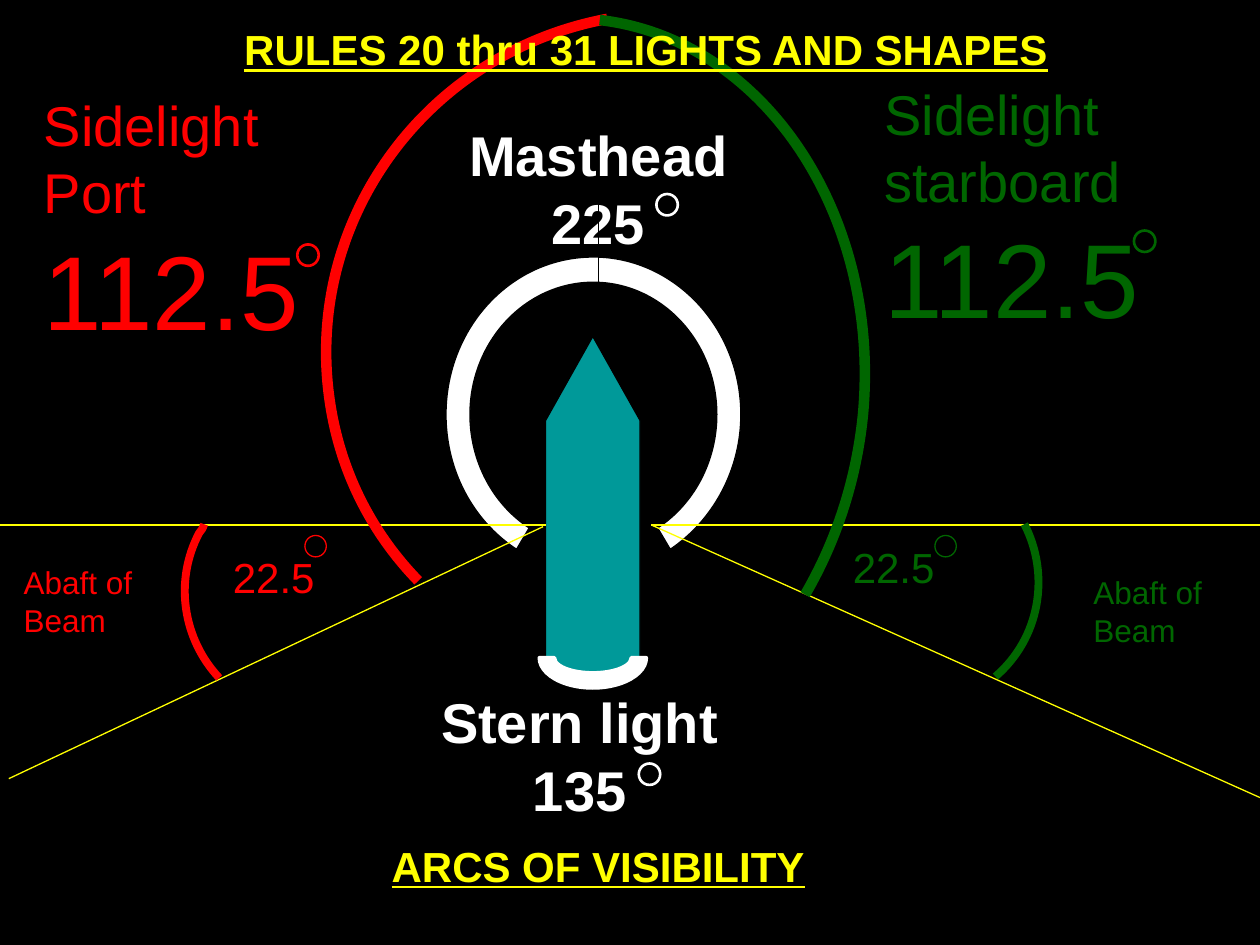
"""Build a slide showing the arcs of visibility of a vessel's lights."""
import math
from dataclasses import dataclass

import pptx
import pptx.dml.color
import pptx.enum.shapes
import pptx.enum.text
import pptx.oxml
import pptx.oxml.ns
import pptx.util
from pptx.util import Inches

RED, GREEN, WHITE, YELLOW, BLACK, TEAL = (
    "FF0000", "006600", "FFFFFF", "FFFF00", "000000", "009999")
SHAPES = pptx.enum.shapes.MSO_SHAPE
CENTER = pptx.enum.text.PP_ALIGN.CENTER
DRAWING = 'xmlns:a="http://schemas.openxmlformats.org/drawingml/2006/main"'
BEAM = 25 / 6
Point = tuple[float, float]
Box = tuple[float, float, float, float]


@dataclass
class Label:
    box: Box
    lines: list[tuple[str, int]]
    color: str
    bold: bool = False
    underline: bool = False
    centered: bool = False
    wrap: bool = False


@dataclass
class Degree:
    left: float
    top: float
    color: str
    width: float = 1.5


@dataclass
class Ray:
    start: Point
    end: Point
    color: str = YELLOW


@dataclass
class Arc:
    box: Box
    rotation: float
    curves: list[list[Point]]
    line: str
    width: float
    fill: str | None = None


def rgb(color: str) -> pptx.dml.color.RGBColor:
    return pptx.dml.color.RGBColor.from_string(color)


def style(shape, fill: str | None, line: str, width: float) -> None:
    shape.shadow.inherit = False
    if fill:
        shape.fill.solid()
        shape.fill.fore_color.rgb = rgb(fill)
    else:
        shape.fill.background()
    shape.line.color.rgb = rgb(line)
    shape.line.width = pptx.util.Pt(width)


def add_preset(slide, preset, box: Box, fill: str | None, line: str, width: float):
    shape = slide.shapes.add_shape(preset, *map(Inches, box))
    style(shape, fill, line, width)
    return shape


def add_degree(slide, degree: Degree) -> None:
    box = (degree.left, degree.top, 0.17, 0.17)
    add_preset(slide, SHAPES.OVAL, box, None, degree.color, degree.width)


def add_label(slide, label: Label) -> None:
    frame = slide.shapes.add_textbox(*map(Inches, label.box)).text_frame
    frame.word_wrap = label.wrap
    frame.auto_size = pptx.enum.text.MSO_AUTO_SIZE.SHAPE_TO_FIT_TEXT
    for index, (text, size) in enumerate(label.lines):
        paragraph = frame.add_paragraph() if index else frame.paragraphs[0]
        if label.centered:
            paragraph.alignment = CENTER
        run = paragraph.add_run()
        run.text = text
        run.font.name = "Arial"
        run.font.size = pptx.util.Pt(size)
        run.font.bold = label.bold
        run.font.underline = label.underline
        run.font.color.rgb = rgb(label.color)


def add_ray(slide, ray: Ray) -> None:
    connector = slide.shapes.add_connector(
        pptx.enum.shapes.MSO_CONNECTOR.STRAIGHT, *map(Inches, ray.start + ray.end))
    connector.line.color.rgb = rgb(ray.color)
    connector.line.width = pptx.util.Pt(0.75)
    connector._element.spPr.append(pptx.oxml.parse_xml(f"<a:effectLst {DRAWING}/>"))
    connector._element.remove(connector._element.find(pptx.oxml.ns.qn("p:style")))


def add_arc(slide, arc: Arc) -> None:
    left, top, width, height = arc.box
    angle = math.radians(arc.rotation)

    def point_xml(point: Point) -> str:
        x, y = point[0] - left - width / 2, point[1] - top - height / 2
        across = x * math.cos(angle) + y * math.sin(angle) + width / 2
        down = y * math.cos(angle) - x * math.sin(angle) + height / 2
        return f'<a:pt x="{Inches(across)}" y="{Inches(down)}"/>'

    commands = ""
    for index, curve in enumerate(arc.curves):
        tag = "lnTo" if index else "moveTo"
        commands += f"<a:{tag}>{point_xml(curve[0])}</a:{tag}>"
        for first in range(1, len(curve), 3):
            points = "".join(map(point_xml, curve[first:first + 3]))
            commands += f"<a:cubicBezTo>{points}</a:cubicBezTo>"
    if arc.fill:
        commands += "<a:close/>"

    builder = slide.shapes.build_freeform(Inches(left), Inches(top))
    builder.add_line_segments([(Inches(left + width), Inches(top + height))], close=False)
    shape = builder.convert_to_shape()
    outline = shape._element.spPr.find(".//" + pptx.oxml.ns.qn("a:pathLst"))
    outline.getparent().replace(outline, pptx.oxml.parse_xml(
        f'<a:pathLst {DRAWING}><a:path w="{Inches(width)}" h="{Inches(height)}">'
        f"{commands}</a:path></a:pathLst>"))
    shape.rotation = arc.rotation
    style(shape, arc.fill, arc.line, arc.width)


MASTHEAD_RING = Arc((3.54, 2.04, 2.33, 2.5), 0, [
    [(4.2, 4.19), (3.91, 4), (3.73, 3.66), (3.73, 3.29), (3.73, 2.71),
     (4.17, 2.24), (4.71, 2.24), (5.25, 2.24), (5.69, 2.71), (5.69, 3.29),
     (5.69, 3.66), (5.51, 4), (5.22, 4.19)],
    [(5.32, 4.36), (5.66, 4.13), (5.88, 3.73), (5.88, 3.29), (5.88, 2.6),
     (5.35, 2.04), (4.71, 2.04), (4.06, 2.04), (3.54, 2.6), (3.54, 3.29),
     (3.54, 3.73), (3.75, 4.13), (4.1, 4.36)]], BLACK, 0.75, WHITE)
RAYS = [
    Ray((5.17, BEAM), (10, 6.33)),
    Ray((0.07, 6.18), (4.31, 4.18)),
    Ray((4.75, 2.58), (4.75, 0), BLACK),
    Ray((5.17, BEAM), (10, BEAM)),
    Ray((0, BEAM), (4.33, BEAM)),
]
ARCS = [
    Arc((1.32, 4.34, 1, 1.03), 207.7, [
        [(1.74, 5.38), (1.45, 5.07), (1.38, 4.61), (1.58, 4.23),
         (1.6, 4.21), (1.61, 4.19), (1.62, 4.16)]], RED, 4.5),
    Arc((7.42, 4.32, 0.97, 1), 62.9, [
        [(8.13, 4.16), (8.34, 4.57), (8.25, 5.07), (7.9, 5.37)]], GREEN, 4.5),
    Arc((1.79, 1.04, 4.19, 2.74), 261.2, [
        [(3.32, 4.61), (2.94, 4.22), (2.7, 3.73), (2.62, 3.2),
         (2.4, 1.77), (3.37, 0.42), (4.82, 0.15)]], RED, 6),
    Arc((4.5, 0.25, 2.42, 4.4), 5.1, [
        [(4.76, 0.16), (6.06, 0.31), (6.99, 1.7), (6.85, 3.28),
         (6.8, 3.8), (6.64, 4.29), (6.39, 4.72)]], GREEN, 6),
]
DEGREES = [
    Degree(2.36, 1.94, RED), Degree(5.21, 1.54, WHITE), Degree(9, 1.83, GREEN),
    Degree(5.07, 6.06, WHITE), Degree(2.42, 4.25, RED, 0.75),
    Degree(7.42, 4.25, GREEN, 0.75),
]
MASTHEAD = Label((3.5, 0.91, 2.5, 1.17), [("Masthead 225", 32)], WHITE,
                 bold=True, centered=True, wrap=True)
LABELS = [
    Label((3.39, 5.41, 2.42, 1.18), [("Stern light", 32), ("135", 32)], WHITE,
          bold=True, centered=True),
    Label((0.25, 0.67, 2.24, 2.19), [("Sidelight", 32), ("Port", 32), ("112.5", 60)], RED),
    Label((6.92, 0.58, 3.27, 2.19),
          [("Sidelight", 32), ("starboard", 32), ("112.5", 60)], GREEN, wrap=True),
    Label((1.75, 4.33, 0.86, 0.51), [("22.5", 24)], RED),
    Label((6.67, 4.25, 0.86, 0.51), [("22.5", 24)], GREEN),
    Label((3.01, 6.62, 3.6, 0.5), [("ARCS OF VISIBILITY", 24)], YELLOW,
          bold=True, underline=True),
    Label((1.84, 0.14, 6.83, 0.51), [("RULES 20 thru 31 LIGHTS AND SHAPES", 24)], YELLOW,
          bold=True, underline=True),
    Label((8.58, 4.5, 1.26, 0.71), [("Abaft of Beam", 18)], GREEN, wrap=True),
    Label((0.09, 4.42, 1.26, 0.71), [("Abaft of Beam", 18)], RED, wrap=True),
]


def main() -> None:
    presentation = pptx.Presentation()
    presentation.slide_width, presentation.slide_height = Inches(10), Inches(7.5)
    slide = presentation.slides.add_slide(presentation.slide_layouts[6])
    slide.background.fill.solid()
    slide.background.fill.fore_color.rgb = rgb(BLACK)
    hull = add_preset(slide, SHAPES.PENTAGON, (3.37, 3.63, 2.67, 0.75), TEAL, BLACK, 0.75)
    hull.rotation = 270
    hull.adjustments[0] = 0.889
    add_arc(slide, MASTHEAD_RING)
    add_label(slide, MASTHEAD)
    for draw, items in ((add_ray, RAYS), (add_arc, ARCS),
                        (add_degree, DEGREES), (add_label, LABELS)):
        for item in items:
            draw(slide, item)
    stern = add_preset(slide, SHAPES.BLOCK_ARC, (4.28, 4.98, 0.85, 0.48), WHITE, WHITE, 2)
    stern.rotation = 180
    presentation.save("out.pptx")


if __name__ == "__main__":
    main()
